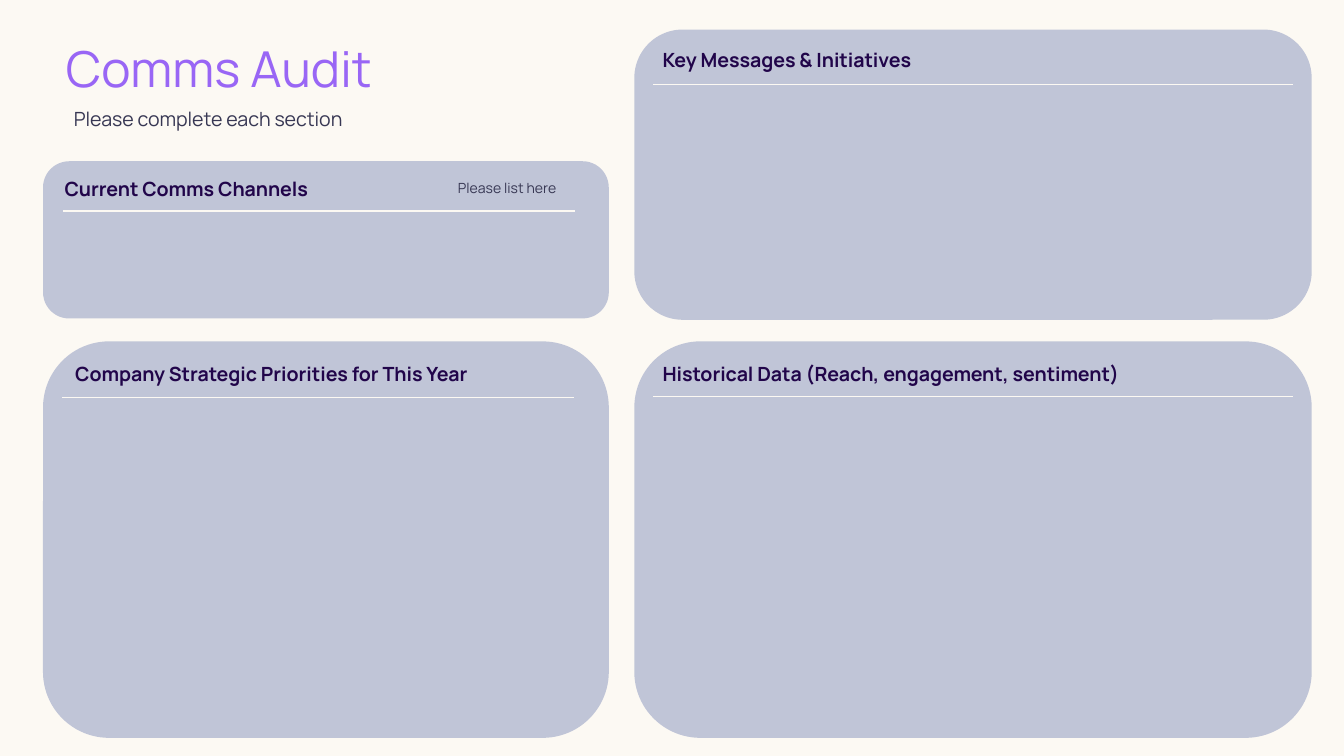
from lxml.etree import SubElement
from pptx import Presentation
from pptx.dml.color import RGBColor
from pptx.enum.shapes import MSO_CONNECTOR, MSO_SHAPE
from pptx.enum.text import PP_ALIGN
from pptx.oxml.ns import qn
from pptx.util import Inches, Pt

CREAM, PANEL = "FCF9F3", "C0C5D7"
PURPLE, DARK, SLATE = "9966F5", "21054A", "373753"


def rgb(value):
    return RGBColor.from_string(value)


def add_text(text, x, y, w, h, size=10.5, color=SLATE, bold=False,
             align=PP_ALIGN.LEFT):
    tf = s.shapes.add_textbox(Inches(x), Inches(y), Inches(w), Inches(h)).text_frame
    tf.word_wrap = True
    tf.margin_left = tf.margin_right = tf.margin_bottom = 0
    tf.margin_top = Inches(0.01)
    p = tf.paragraphs[0]
    p.alignment = align
    p.line_spacing = 1.15
    r = p.add_run()
    r.text = text
    r.font.name = "Manrope"
    r.font.size = Pt(size)
    r.font.bold = bold
    r.font.color.rgb = rgb(color)


prs = Presentation()
prs.slide_width = Inches(10)
prs.slide_height = Inches(10 * 9 / 16)
s = prs.slides.add_slide(prs.slide_layouts[6])
s.background.fill.solid()
s.background.fill.fore_color.rgb = rgb(CREAM)

add_text("Comms Audit", 0.49, 0.21, 3.62, 0.52, size=26.5, color=PURPLE)
add_text("Please complete each section", 0.55, 0.76, 3.62, 0.21)

# heading, panel box, heading position and width, rule start, rule length
panels = [
    ("Current Comms Channels",
     (0.32, 1.2, 4.21, 1.17), (0.48, 1.28, 2.08), (0.47, 1.57), 3.81),
    ("Company Strategic Priorities for This Year",
     (0.32, 2.54, 4.21, 2.95), (0.56, 2.66, 3.66), (0.46, 2.96), 3.81),
    ("Key Messages & Initiatives",
     (4.72, 0.22, 5.04, 2.16), (4.93, 0.32, 3.81), (4.86, 0.63), 4.76),
    ("Historical Data (Reach, engagement, sentiment)",
     (4.72, 2.54, 5.04, 2.95), (4.93, 2.66, 3.81), (4.86, 2.95), 4.76),
]
for heading, box, heading_at, (x, y), length in panels:
    sp = s.shapes.add_shape(MSO_SHAPE.ROUNDED_RECTANGLE, *map(Inches, box))
    sp.shadow.inherit = False
    sp.fill.solid()
    sp.fill.fore_color.rgb = rgb(PANEL)
    sp.line.fill.background()

    add_text(heading, *heading_at, 0.21, color=DARK, bold=True)

    rule = s.shapes.add_connector(MSO_CONNECTOR.STRAIGHT, Inches(x), Inches(y),
                                  Inches(x + length), Inches(y))
    rule.line.color.rgb = rgb(CREAM)
    rule.line.width = Pt(0.75)
    SubElement(rule._element.spPr, qn("a:effectLst"))

add_text("Please list here", 3.17, 1.31, 0.97, 0.16, size=7.5,
         align=PP_ALIGN.RIGHT)

prs.save("out.pptx")
